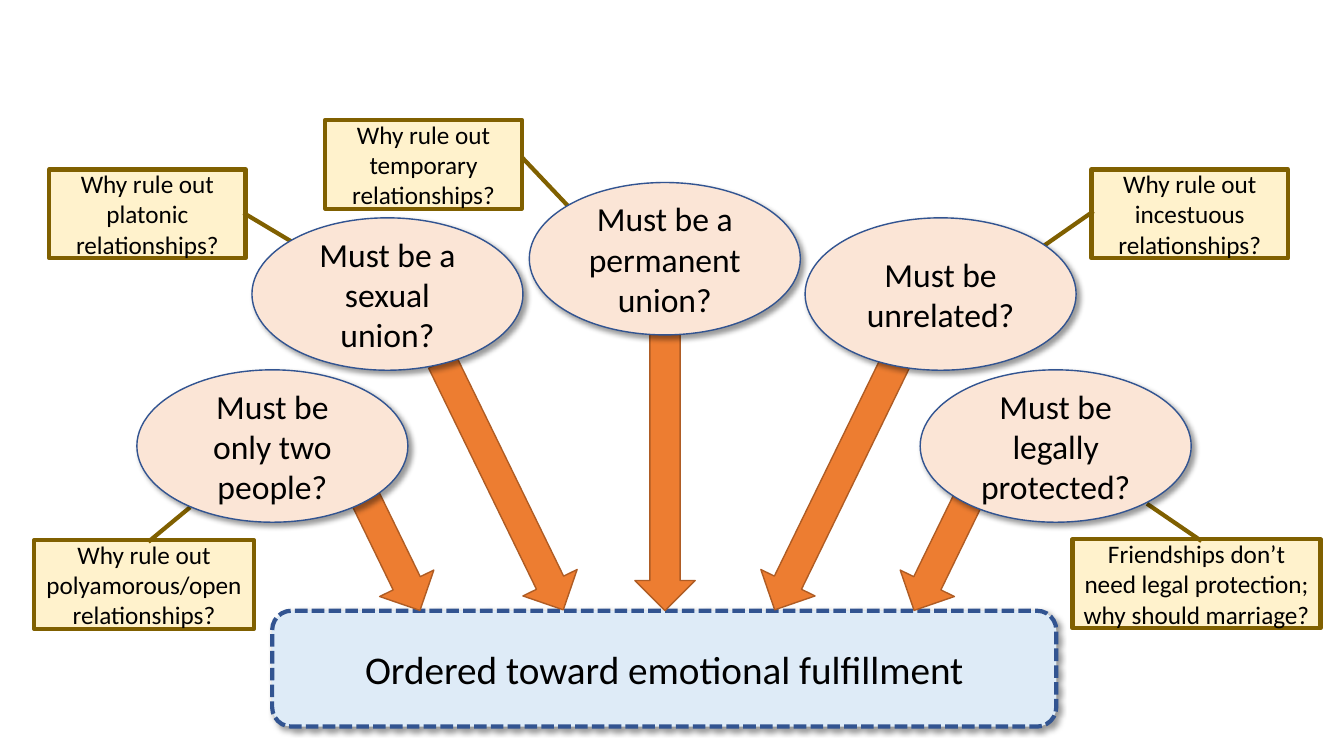
"""Build a slide questioning marriage as a union ordered toward emotional fulfillment."""
from dataclasses import dataclass

from lxml.etree import SubElement
from pptx import Presentation
from pptx.dml.color import RGBColor
from pptx.enum.dml import MSO_LINE_DASH_STYLE as Dash
from pptx.enum.shapes import MSO_SHAPE as Shape
from pptx.enum.text import MSO_ANCHOR, PP_ALIGN
from pptx.oxml.ns import qn
from pptx.util import Cm, Pt


@dataclass(frozen=True)
class Theme:
    font: str = "Calibri"
    ink: str = "000000"
    blue: str = "325491"
    goal_fill: str = "DEEBF7"
    norm_fill: str = "FBE5D6"
    objection_fill: str = "FFF2CC"
    objection_line: str = "806000"
    arrow_fill: str = "ED7D31"
    arrow_line: str = "AF5C24"
    goal_size: int = 28
    norm_size: int = 24
    objection_size: int = 18
    thick: int = 3
    thin: int = 1


THEME = Theme()
SLIDE_SIZE = (33.87, 19.05)
NORM_SIZE = (6.83, 3.84)
OBJECTION_HEIGHT = 2.24
ARROW_WIDTH = 1.52

GOAL = ("Ordered toward emotional fulfillment", (6.86, 15.39, 19.76, 2.92))
NORMS = [
    ("Must be only two people?", 3.45, 9.32),
    ("Must be a sexual union?", 6.35, 5.49),
    ("Must be legally protected?", 23.19, 9.32),
    ("Must be unrelated?", 20.29, 5.49),
    ("Must be a permanent union?", 13.34, 4.6),
]
OBJECTIONS = [
    ("Friendships don’t need legal protection; why should marriage?",
     27.03, 13.59, 6.25, (0.02, 0.52, -0.4, 0.3)),
    ("Why rule out incestuous relationships?",
     27.51, 4.27, 4.95, (0.47, 0.01, 0.87, -0.25)),
    ("Why rule out temporary relationships?",
     8.2, 3.02, 4.95, (0.42, 1, 0.98, 1.24)),
    ("Why rule out platonic relationships?",
     1.24, 4.27, 4.95, (0.49, 0.99, 0.82, 1.24)),
    ("Why rule out polyamorous/open relationships?",
     0.86, 13.61, 5.54, (0.02, 0.52, -0.37, 0.71)),
]
ARROWS = [
    (16, 8.43, 6.96, 0),
    (20.29, 8.76, 6.96, 26),
    (22.96, 12.42, 3.12, 26),
    (11.91, 8.76, 6.96, -26),
    (9.14, 12.42, 3.12, -26),
]


def add_box(slide, kind, box, fill, line, width):
    shape = slide.shapes.add_shape(kind, *map(Cm, box))
    shape.shadow.inherit = False
    shape.fill.solid()
    shape.fill.fore_color.rgb = RGBColor.from_string(fill)
    shape.line.color.rgb = RGBColor.from_string(line)
    shape.line.width = Pt(width)
    return shape


def write(shape, text, size):
    frame = shape.text_frame
    frame.word_wrap = True
    frame.vertical_anchor = MSO_ANCHOR.MIDDLE
    paragraph = frame.paragraphs[0]
    paragraph.text = text
    paragraph.alignment = PP_ALIGN.CENTER
    paragraph.font.name = THEME.font
    paragraph.font.size = Pt(size)
    paragraph.font.color.rgb = RGBColor.from_string(THEME.ink)


def add_shadow(shape):
    effects = shape.element.spPr.find(qn("a:effectLst"))
    shadow = SubElement(effects, qn("a:outerShdw"), blurRad=str(Pt(4)),
                        dist=str(Pt(3)), dir=str(45 * 60000),
                        algn="tl", rotWithShape="0")
    color = SubElement(shadow, qn("a:srgbClr"), val=THEME.ink)
    SubElement(color, qn("a:alpha"), val="40000")


def add_objection(slide, text, left, top, width, pointer):
    shape = add_box(slide, Shape.LINE_CALLOUT_1, (left, top, width, OBJECTION_HEIGHT),
                    THEME.objection_fill, THEME.objection_line, THEME.thick)
    for index, value in enumerate(pointer):
        shape.adjustments[index] = value
    write(shape, text, THEME.objection_size)


def add_goal(slide, text, box):
    shape = add_box(slide, Shape.ROUNDED_RECTANGLE, box,
                    THEME.goal_fill, THEME.blue, THEME.thick)
    shape.line.dash_style = Dash.SQUARE_DOT
    add_shadow(shape)
    write(shape, text, THEME.goal_size)


def add_arrow(slide, left, top, length, angle):
    shape = add_box(slide, Shape.DOWN_ARROW, (left, top, ARROW_WIDTH, length),
                    THEME.arrow_fill, THEME.arrow_line, THEME.thin)
    shape.rotation = angle


def add_norm(slide, text, left, top):
    shape = add_box(slide, Shape.OVAL, (left, top, *NORM_SIZE),
                    THEME.norm_fill, THEME.blue, THEME.thin)
    add_shadow(shape)
    write(shape, text, THEME.norm_size)


def main():
    presentation = Presentation()
    presentation.slide_width, presentation.slide_height = map(Cm, SLIDE_SIZE)
    slide = presentation.slides.add_slide(presentation.slide_layouts[6])
    for objection in OBJECTIONS:
        add_objection(slide, *objection)
    add_goal(slide, *GOAL)
    for arrow in ARROWS:
        add_arrow(slide, *arrow)
    for norm in NORMS:
        add_norm(slide, *norm)
    presentation.save("out.pptx")


if __name__ == "__main__":
    main()
